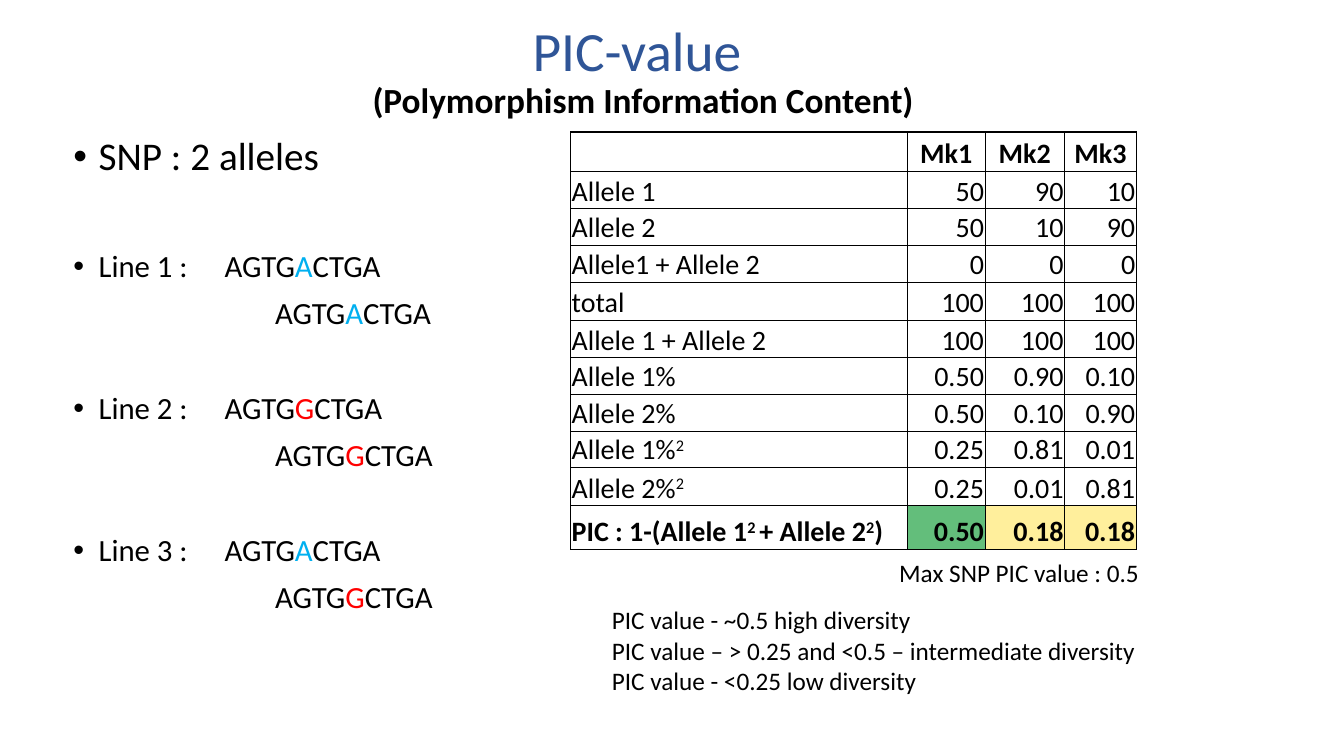
import dataclasses

import lxml.etree
import pptx
import pptx.dml.color
import pptx.enum.text
import pptx.oxml.ns
import pptx.util

Inches = pptx.util.Inches
Pt = pptx.util.Pt
ALIGN = pptx.enum.text.PP_ALIGN
ANCHOR = pptx.enum.text.MSO_ANCHOR


@dataclasses.dataclass(frozen=True)
class Theme:
    font: str = "Calibri"
    text: str = "000000"
    title: str = "2F5597"
    allele_a: str = "00B0F0"
    allele_g: str = "FF0000"
    high_diversity: str = "63BE7B"
    low_diversity: str = "FFEF9C"
    title_size: float = 39.6
    subtitle_size: float = 25.2
    heading_size: float = 28
    sequence_size: float = 22
    table_size: float = 20
    note_size: float = 18
    thin_border: float = 0.5
    thick_border: float = 1


@dataclasses.dataclass(frozen=True)
class Piece:
    """A stretch of text that differs from its neighbours."""
    text: str
    color: str = ""
    superscript: bool = False


class SlideBuilder:
    def __init__(self, slide, theme):
        self.slide = slide
        self.theme = theme

    def style_run(self, run, size, color="", bold=False):
        run.font.name = self.theme.font
        run.font.size = Pt(size)
        run.font.bold = bold
        run.font.color.rgb = pptx.dml.color.RGBColor.from_string(color or self.theme.text)

    def write_pieces(self, paragraph, pieces, size, bold=False):
        for piece in pieces:
            run = paragraph.add_run()
            run.text = piece.text
            self.style_run(run, size, piece.color, bold)
            if piece.superscript:
                run.font._element.set("baseline", "30000")

    def add_box(self, left, top, width, height, wrap=True):
        shape = self.slide.shapes.add_textbox(
            Inches(left), Inches(top), Inches(width), Inches(height))
        shape.text_frame.word_wrap = wrap
        return shape.text_frame

    def add_title(self, title, subtitle):
        frame = self.add_box(0.63, 0.19, 11.5, 1.05)
        frame.vertical_anchor = ANCHOR.MIDDLE
        paragraph = frame.paragraphs[0]
        paragraph.text = f"{title} \v{subtitle}"
        paragraph.alignment = ALIGN.CENTER
        paragraph.line_spacing = 0.9
        title_run, subtitle_run = paragraph.runs
        self.style_run(title_run, self.theme.title_size, self.theme.title)
        self.style_run(subtitle_run, self.theme.subtitle_size, bold=True)

    def add_note(self, lines, left, top, width, height, wrap=True):
        frame = self.add_box(left, top, width, height, wrap)
        frame.text = "\n".join(lines)
        for paragraph in frame.paragraphs:
            for run in paragraph.runs:
                self.style_run(run, self.theme.note_size)

    def indent(self, paragraph, left, bullet=False):
        properties = paragraph._p.get_or_add_pPr()
        properties.set("marL", str(Inches(left)))
        properties.set("indent", str(-Inches(left) if bullet else 0))
        if bullet:
            for tag, name, value in (("a:buFont", "typeface", "Arial"), ("a:buChar", "char", "•")):
                element = lxml.etree.SubElement(properties, pptx.oxml.ns.qn(tag))
                element.set(name, value)
        paragraph.line_spacing = 0.9

    def add_sequences(self, heading, lines):
        """Bulleted heading, then each line's two allele sequences."""
        frame = self.add_box(0.63, 1.31, 11.5, 5.02)
        paragraph = frame.paragraphs[0]
        self.indent(paragraph, 0.25, bullet=True)
        self.write_pieces(paragraph, [Piece(heading)], self.theme.heading_size)
        colors = {"A": self.theme.allele_a, "G": self.theme.allele_g}
        for line_index, (label, alleles) in enumerate(lines):
            for allele_index, allele in enumerate(alleles):
                first = allele_index == 0
                paragraph = frame.add_paragraph()
                self.indent(paragraph, 0.25 if first else 2, bullet=first)
                group_gap = 51 if line_index == 0 else 44
                paragraph.space_before = Pt(group_gap if first else 10)
                start = f"{label}\tAGTG" if first else "AGTG"
                pieces = [Piece(start), Piece(allele, colors[allele]), Piece("CTGA")]
                self.write_pieces(paragraph, pieces, self.theme.sequence_size)

    def set_borders(self, cell, widths):
        properties = cell._tc.get_or_add_tcPr()
        for side, width in zip("LRTB", widths):
            line = lxml.etree.SubElement(properties, pptx.oxml.ns.qn(f"a:ln{side}"))
            line.set("w", str(Pt(width)))
            fill = lxml.etree.SubElement(line, pptx.oxml.ns.qn("a:solidFill"))
            color = lxml.etree.SubElement(fill, pptx.oxml.ns.qn("a:srgbClr"))
            color.set("val", self.theme.text)

    def add_table(self, rows, left, top, column_widths, row_heights, thick_below, fills):
        """thick_below holds the rows with a thick lower edge; fills colours the last row."""
        table = self.slide.shapes.add_table(
            len(rows), len(column_widths), Inches(left), Inches(top),
            Inches(sum(column_widths)), Inches(sum(row_heights))).table
        table.first_row = table.horz_banding = False
        for column, width in zip(table.columns, column_widths):
            column.width = Inches(width)
        for row, height in zip(table.rows, row_heights):
            row.height = Inches(height)
        last_row, last_column = len(rows) - 1, len(column_widths) - 1
        thick_edges = {-1, last_row, *thick_below}
        thin, thick = self.theme.thin_border, self.theme.thick_border
        for row_index, (label, *values) in enumerate(rows):
            contents = [label, *([Piece(value)] for value in values)]
            for column_index, pieces in enumerate(contents):
                cell = table.cell(row_index, column_index)
                cell.vertical_anchor = ANCHOR.BOTTOM
                cell.margin_left = cell.margin_right = cell.margin_top = Inches(0.01)
                cell.margin_bottom = 0
                is_thick = (column_index == 0, column_index == last_column,
                            row_index - 1 in thick_edges, row_index in thick_edges)
                self.set_borders(cell, [thick if edge else thin for edge in is_thick])
                if row_index == last_row and column_index:
                    cell.fill.solid()
                    cell.fill.fore_color.rgb = pptx.dml.color.RGBColor.from_string(
                        fills[column_index - 1])
                else:
                    cell.fill.background()
                paragraph = cell.text_frame.paragraphs[0]
                if column_index:
                    paragraph.alignment = ALIGN.RIGHT if row_index else ALIGN.CENTER
                self.write_pieces(paragraph, pieces, self.theme.table_size,
                                  bold=row_index in (0, last_row))


def main():
    presentation = pptx.Presentation()
    presentation.slide_width, presentation.slide_height = Inches(13.33), Inches(7.5)
    theme = Theme()
    builder = SlideBuilder(presentation.slides.add_slide(presentation.slide_layouts[6]), theme)

    builder.add_title("PIC-value", "(Polymorphism Information Content)")
    builder.add_sequences(
        "SNP : 2 alleles", [("Line 1 :", "AA"), ("Line 2 :", "GG"), ("Line 3 :", "AG")])
    builder.add_note(["Max SNP PIC value : 0.5"], 8.82, 5.48, 3.11, 0.4)

    squared = Piece("2", superscript=True)
    pic_label = [Piece("PIC : 1-(Allele 1"), Piece("2 ", superscript=True),
                 Piece("+ Allele 2"), squared, Piece(")")]
    allele_rows = [
        ([], "Mk1", "Mk2", "Mk3"),
        ([Piece("Allele 1")], "50", "90", "10"),
        ([Piece("Allele 2")], "50", "10", "90"),
        ([Piece("Allele1 + Allele 2")], "0", "0", "0"),
        ([Piece("total")], "100", "100", "100"),
        ([Piece("Allele 1 + Allele 2")], "100", "100", "100"),
        ([Piece("Allele 1%")], "0.50", "0.90", "0.10"),
        ([Piece("Allele 2%")], "0.50", "0.10", "0.90"),
        ([Piece("Allele 1%"), squared], "0.25", "0.81", "0.01"),
        ([Piece("Allele 2%"), squared], "0.25", "0.01", "0.81"),
        (pic_label, "0.50", "0.18", "0.18"),
    ]
    builder.add_table(
        allele_rows, 5.66, 1.31, column_widths=[3.34, 0.77, 0.79, 0.71],
        row_heights=[0.39, 0.37, 0.36, 0.37, 0.38, 0.37, 0.36, 0.37, 0.36, 0.38, 0.43],
        thick_below=[0, 4, 9],
        fills=[theme.high_diversity, theme.low_diversity, theme.low_diversity])

    builder.add_note(
        ["PIC value - ~0.5 high diversity",
         "PIC value – > 0.25 and <0.5 – intermediate diversity",
         "PIC value - <0.25 low diversity"], 5.97, 5.95, 5.45, 1.01, wrap=False)
    presentation.save("out.pptx")


if __name__ == "__main__":
    main()
